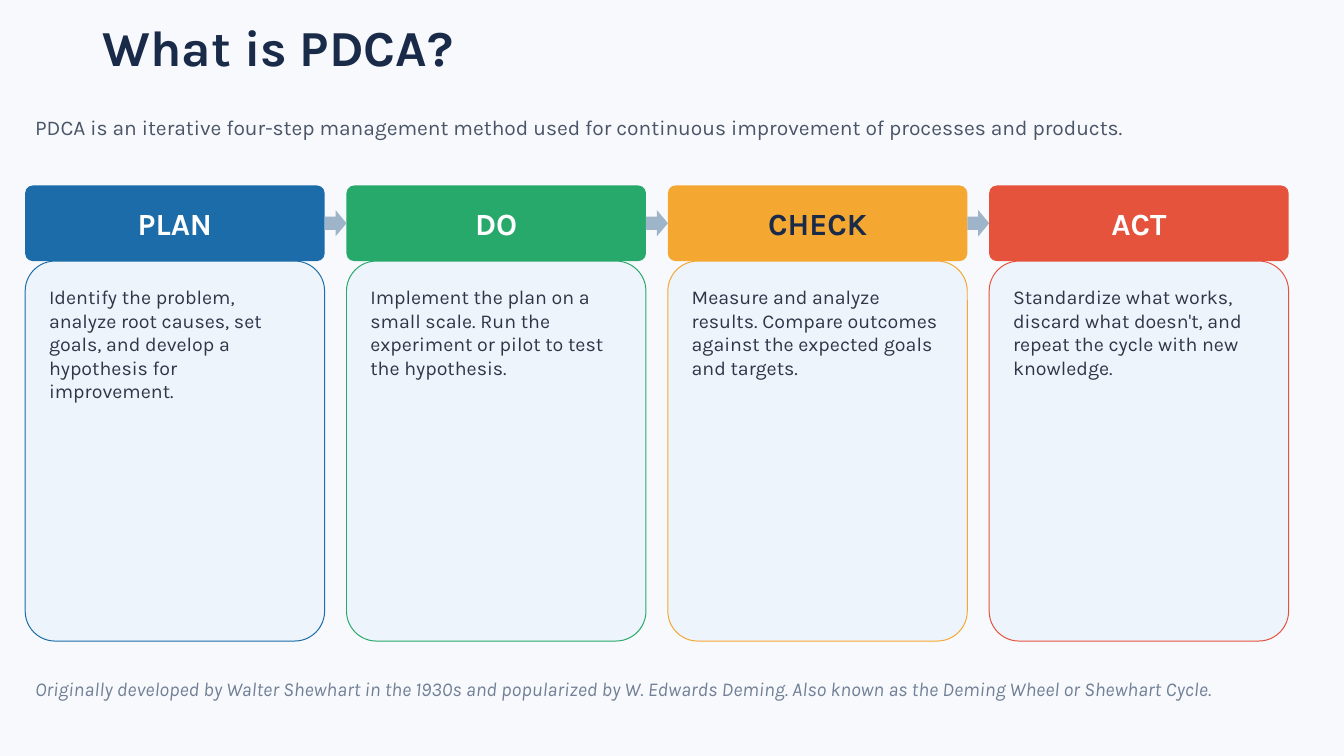
from pptx import Presentation
from pptx.dml.color import RGBColor
from pptx.enum.shapes import MSO_SHAPE as Shape
from pptx.enum.text import MSO_ANCHOR as Anchor, PP_ALIGN as Align
from pptx.util import Inches, Pt

# Content
TITLE = "What is PDCA?"
INTRO = ("PDCA is an iterative four-step management method used for "
         "continuous improvement of processes and products.")
STEPS = [
    ("PLAN", "blue", "white", "Identify the problem, analyze root causes, set goals, "
     "and develop a hypothesis for improvement."),
    ("DO", "green", "white", "Implement the plan on a small scale. Run the experiment "
     "or pilot to test the hypothesis."),
    ("CHECK", "amber", "navy", "Measure and analyze results. Compare outcomes against "
     "the expected goals and targets."),
    ("ACT", "red", "white", "Standardize what works, discard what doesn't, and repeat "
     "the cycle with new knowledge."),
]
ORIGIN = ("Originally developed by Walter Shewhart in the 1930s and popularized by "
          "W. Edwards Deming. Also known as the Deming Wheel or Shewhart Cycle.")

FONT = "Karla"
COLORS = {
    "back": "F7F9FC", "navy": "1A2B4A", "slate": "4A5568", "ink": "2D3748",
    "gray": "718096", "card": "EEF4FB", "arrow": "9EB4C8", "white": "FFFFFF",
    "blue": "1B6CA8", "green": "27A96C", "amber": "F4A832", "red": "E5533D",
}

# Layout in inches
LEFT, WIDE = 0.25, 12.83
CARD_W, GAP = 2.97, 0.217
HEAD_Y, HEAD_H, BODY_H = 1.84, 0.75, 3.77
ARROW_H = 0.26


def color(name):
    return RGBColor.from_string(COLORS[name])


def write(frame, text, size, tone, bold=False, italic=False):
    frame.word_wrap = True
    para = frame.paragraphs[0]
    run = para.add_run()
    run.text = text
    font = run.font
    font.name, font.size = FONT, Pt(size)
    font.bold, font.italic = bold, italic
    font.color.rgb = color(tone)
    return para


def pad(frame, x, y):
    frame.margin_left = frame.margin_right = Inches(x)
    frame.margin_top = frame.margin_bottom = Inches(y)


def add_note(slide, text, y, h, size, tone, italic=False):
    box = slide.shapes.add_textbox(Inches(LEFT), Inches(y), Inches(WIDE), Inches(h))
    box.text_frame.vertical_anchor = Anchor.MIDDLE
    write(box.text_frame, text, size, tone, italic=italic)


def add_block(slide, kind, x, y, w, h, fill, line=None):
    block = slide.shapes.add_shape(kind, Inches(x), Inches(y), Inches(w), Inches(h))
    block.shadow.inherit = False
    block.fill.solid()
    block.fill.fore_color.rgb = color(fill)
    if line:
        block.line.color.rgb = color(line)
        block.line.width = Pt(0.72)
    else:
        block.line.fill.background()
    if kind == Shape.ROUNDED_RECTANGLE:
        block.adjustments[0] = 0.1
    return block


def add_step(slide, x, name, hue, tone, text):
    head = add_block(slide, Shape.ROUNDED_RECTANGLE, x, HEAD_Y, CARD_W, HEAD_H, hue)
    frame = head.text_frame
    pad(frame, 0.1, 0)
    frame.vertical_anchor = Anchor.MIDDLE
    write(frame, name, 22, tone, bold=True).alignment = Align.CENTER

    body = add_block(slide, Shape.ROUNDED_RECTANGLE, x, HEAD_Y + HEAD_H,
                     CARD_W, BODY_H, "card", hue)
    frame = body.text_frame
    pad(frame, 0.15, 0.15)
    frame.vertical_anchor = Anchor.TOP
    write(frame, text, 14, "ink").alignment = Align.LEFT


def main():
    deck = Presentation()
    deck.slide_width, deck.slide_height = Inches(13.33), Inches(7.5)
    slide = deck.slides.add_slide(deck.slide_layouts[5])
    slide.background.fill.solid()
    slide.background.fill.fore_color.rgb = color("back")

    # Title and intro
    title = slide.shapes.title
    title.left, title.top = Inches(0.92), Inches(0.14)
    title.width, title.height = Inches(11.5), Inches(0.72)
    title.text_frame.vertical_anchor = Anchor.MIDDLE
    para = write(title.text_frame, TITLE, 36, "navy", bold=True)
    para.alignment, para.line_spacing = Align.LEFT, 0.9
    add_note(slide, INTRO, 0.97, 0.58, 15, "slate")

    # Step cards
    lefts = [LEFT + i * (CARD_W + GAP) for i in range(len(STEPS))]
    for x, step in zip(lefts, STEPS):
        add_step(slide, x, *step)

    # Arrows in the gaps
    for x in lefts[:-1]:
        add_block(slide, Shape.RIGHT_ARROW, x + CARD_W,
                  HEAD_Y + (HEAD_H - ARROW_H) / 2, GAP, ARROW_H, "arrow")

    # Origin line
    add_note(slide, ORIGIN, 6.58, 0.51, 14, "gray", italic=True)
    deck.save("out.pptx")


if __name__ == "__main__":
    main()
